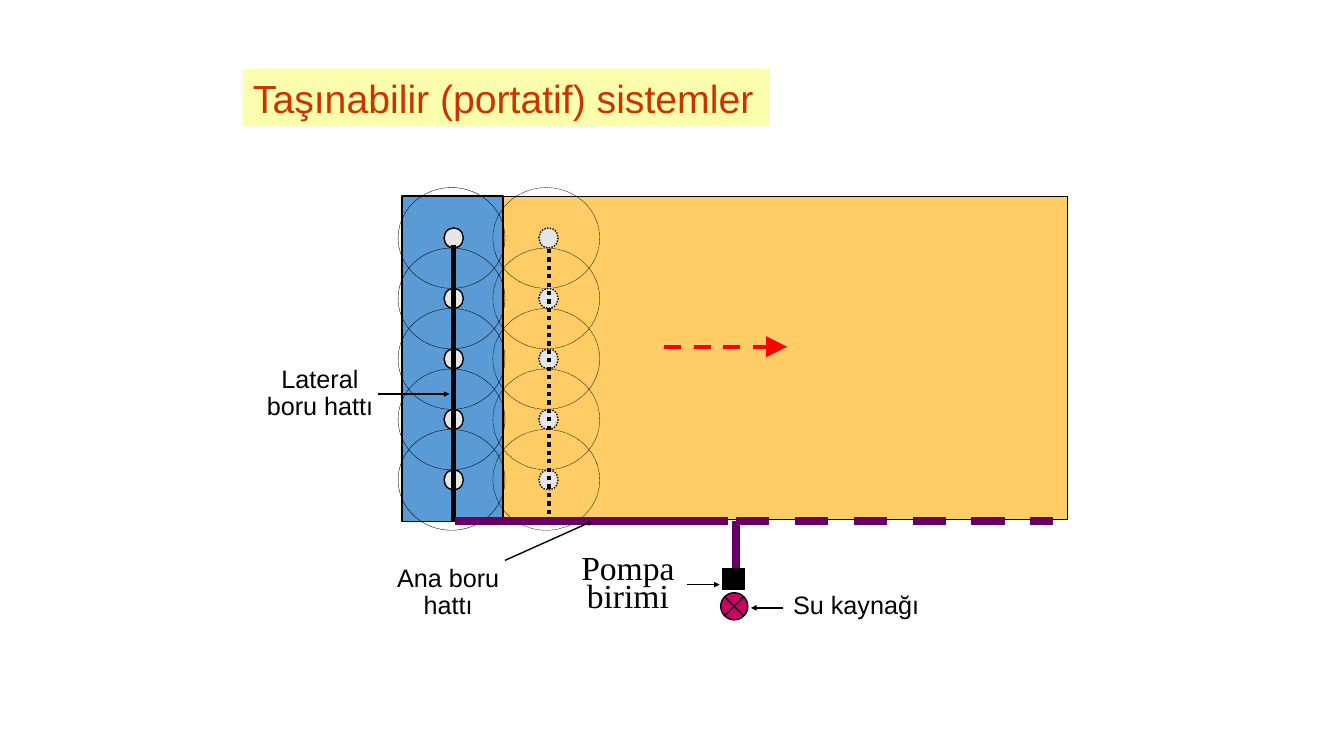
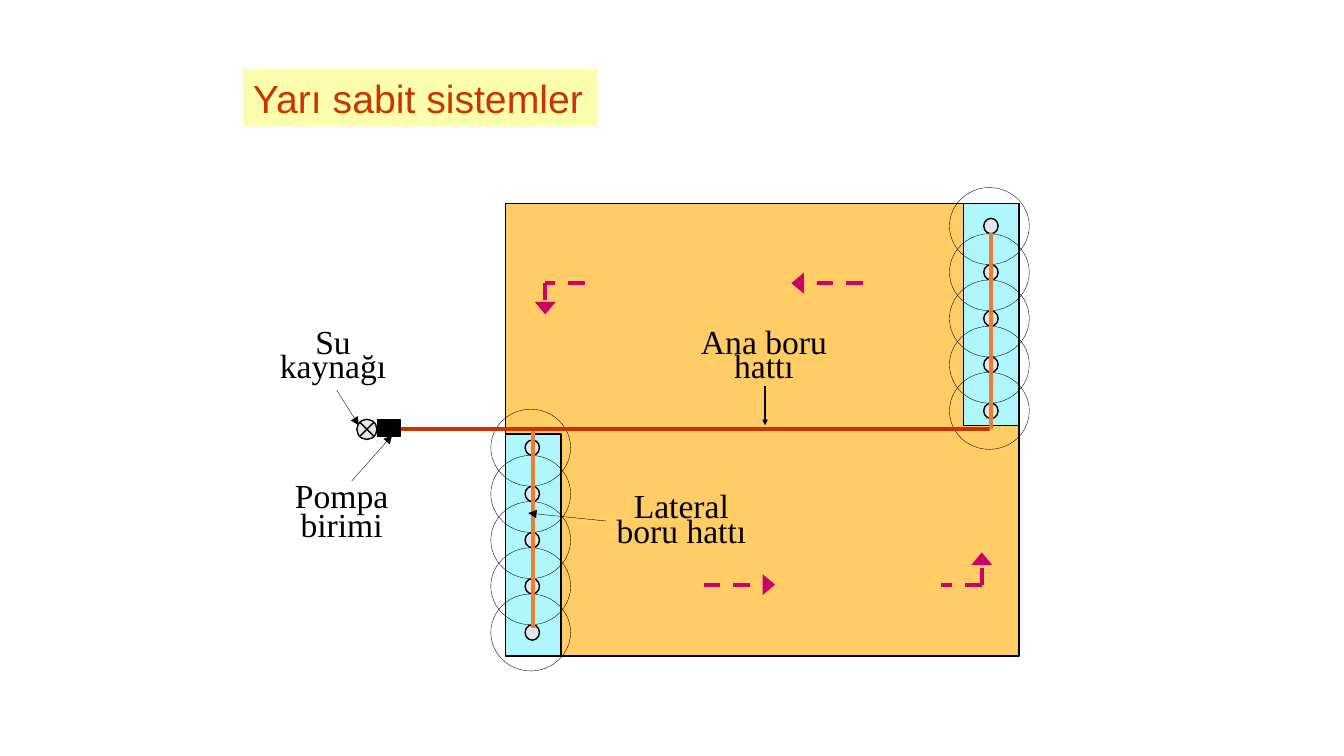
from dataclasses import dataclass
from typing import Any

from lxml import etree
from pptx import Presentation
from pptx.dml.color import RGBColor
from pptx.enum.dml import MSO_LINE
from pptx.enum.shapes import MSO_CONNECTOR, MSO_SHAPE
from pptx.enum.text import MSO_ANCHOR, MSO_AUTO_SIZE, PP_ALIGN
from pptx.oxml.ns import qn
from pptx.util import Pt

RECT = MSO_SHAPE.RECTANGLE
CIRCLE = MSO_SHAPE.FLOWCHART_CONNECTOR
CROSSED_CIRCLE = MSO_SHAPE.FLOWCHART_SUMMING_JUNCTION
STRAIGHT = MSO_CONNECTOR.STRAIGHT
DASH = MSO_LINE.DASH
DOTS = MSO_LINE.ROUND_DOT
LEFT, CENTER = PP_ALIGN.LEFT, PP_ALIGN.CENTER
MIDDLE = MSO_ANCHOR.MIDDLE
FIXED = MSO_AUTO_SIZE.NONE

SANS, SERIF = "Arial", "Times New Roman"
SPRINKLERS = 5
SMALL_HEAD = ("sm", "sm")
MEDIUM_HEAD = ("med", "med")
WIDE_HEAD = ("lg", "med")
LARGE_HEAD = ("lg", "lg")

COLORS = {
    "title": "CC3300",
    "title_band": "FBFFAD",
    "field": "FFCC66",
    "wet_blue": "5B9BD5",
    "wet_cyan": "AFF6FD",
    "sprinkler": "E7E6E6",
    "ink": "000000",
    "red": "FF0000",
    "purple": "660066",
    "pink": "CC0066",
    "main": "CC3300",
    "lateral": "ED7D31",
}


def rgb(name):
    return RGBColor.from_string(COLORS[name])


def set_font(paragraph, face, size, color):
    paragraph.font.name = face
    paragraph.font.size = Pt(size)
    paragraph.font.color.rgb = rgb(color)


def add_titled_slide(deck, text, width):
    slide = deck.slides.add_slide(deck.slide_layouts[5])
    title = slide.shapes.title
    title.left, title.top = Pt(173.5), Pt(49)
    title.width, title.height = Pt(width), Pt(41.3)
    title.fill.solid()
    title.fill.fore_color.rgb = rgb("title_band")
    frame = title.text_frame
    frame.text = text
    frame.word_wrap = False
    frame.auto_size = FIXED
    frame.vertical_anchor = MIDDLE
    frame.paragraphs[0].alignment = LEFT
    set_font(frame.paragraphs[0], SANS, 28, "title")
    return slide


@dataclass
class Diagram:
    slide: Any
    left: float
    top: float

    def place(self, x, y):
        return Pt(round(self.left + x, 2)), Pt(round(self.top + y, 2))

    def figure(self, kind, x, y, width, height, fill=None, weight=1,
               dash=None):
        shape = self.slide.shapes.add_shape(
            kind, *self.place(x, y), Pt(width), Pt(height))
        shape.shadow.inherit = False
        if fill:
            shape.fill.solid()
            shape.fill.fore_color.rgb = rgb(fill)
        else:
            shape.fill.background()
        shape.line.color.rgb = rgb("ink")
        shape.line.width = Pt(weight)
        if dash:
            shape.line.dash_style = dash

    def line(self, start, end, color="ink", weight=1, dash=None, head=None):
        connector = self.slide.shapes.add_connector(
            STRAIGHT, *self.place(*start), *self.place(*end))
        connector.line.color.rgb = rgb(color)
        connector.line.width = Pt(weight)
        if dash:
            connector.line.dash_style = dash
        properties = connector._element.spPr
        if head:
            etree.SubElement(properties.find(qn("a:ln")), qn("a:tailEnd"),
                             type="triangle", w=head[0], len=head[1])
        etree.SubElement(properties, qn("a:effectLst"))

    def label(self, lines, x, y, width, height, face, size, spacing,
              align=CENTER):
        box = self.slide.shapes.add_textbox(
            *self.place(x, y), Pt(width), Pt(height))
        frame = box.text_frame
        frame.text = "\n".join(lines)
        frame.word_wrap = False
        frame.auto_size = FIXED
        frame.vertical_anchor = MIDDLE
        for paragraph in frame.paragraphs:
            paragraph.alignment = align
            paragraph.line_spacing = spacing
            set_font(paragraph, face, size, "ink")

    def sprinkler_column(self, x, y, reach_width, reach_height, dash=None):
        for index in range(SPRINKLERS):
            row = y + index * 0.6 * reach_height
            self.figure(CIRCLE, x, row, reach_width, reach_height,
                        weight=0.25, dash=dash)
            self.figure(CIRCLE, x + 0.43 * reach_width,
                        row + 0.4 * reach_height, 0.18 * reach_width,
                        0.2 * reach_height, "sprinkler", dash=dash)


def draw_portable_system(slide, left, top):
    plan = Diagram(slide, left, top)
    main_y, riser_x = 232.2, 235.6

    plan.figure(RECT, 0, 0, 472.5, 231, "field", 0.25)
    plan.line((184.5, 107.7), (272.3, 107.7), "red", 3, DASH, LARGE_HEAD)
    plan.figure(RECT, -2.7, 0, 72, 232.6, "wet_blue")
    plan.sprinkler_column(-5.6, -6, 76.3, 72)
    plan.sprinkler_column(62.1, -6, 76.3, 72, DOTS)
    plan.line((34, 35), (34, main_y), weight=3)
    plan.line((102.4, 37.8), (102.4, 229.4), weight=3, dash=DOTS)

    plan.figure(RECT, 226.2, 266, 15.8, 15.1, "ink")
    plan.line((34.7, main_y), (229.8, main_y), "purple", 6)
    plan.line((riser_x, main_y), (462.4, main_y), "purple", 6, DASH)
    plan.line((riser_x, main_y), (riser_x, 266), "purple", 6)
    plan.figure(CROSSED_CIRCLE, 224.8, 283.4, 19.4, 19.4, "pink")

    plan.label(["Pompa", "birimi"], 117.5, 254.6, 82, 48, SERIF, 24, 0.7)
    plan.label(["Su kaynağı"], 269.4, 277.6, 109.4, 28.8, SANS, 18, 1, LEFT)
    plan.label(["Ana boru", "hattı"], -14.2, 260.3, 88.6, 46.8, SANS, 18, 0.9)
    plan.label(["Lateral", "boru hattı"], -107.1, 117.8, 91.4, 46.8,
               SANS, 18, 0.9)
    for start, end in (
        ((269.4, 294.2), (246.4, 294.2)),
        ((201, 277.6), (224, 277.6)),
        ((70.7, 260.3), (133.4, main_y)),
        ((-20, 141.5), (31.1, 141.5)),
    ):
        plan.line(start, end, head=SMALL_HEAD)


def draw_semi_fixed_system(slide, left, top):
    plan = Diagram(slide, left, top)
    main_y = 161.2

    plan.figure(RECT, 0, 0, 367, 323, "field")
    for lines, x, y, width, height, spacing in (
        (["Su", "kaynağı"], -168.8, 90, 91.4, 42.5, 0.6),
        (["Pompa", "birimi"], -158, 198, 82, 48, 0.7),
        (["Ana boru", "hattı"], 132.2, 90, 105, 42.5, 0.6),
        (["Lateral", "boru hattı"], 71.7, 207.3, 108, 42.5, 0.6),
    ):
        plan.label(lines, x, y, width, height, SERIF, 24, spacing)

    for strip_x, strip_y, reach_x, reach_y in (
        (327.3, 0, 317.2, -11.5),
        (0, 164.5, -10.4, 146.8),
    ):
        plan.figure(RECT, strip_x, strip_y, 39.7, 158.4, "wet_cyan")
        plan.sprinkler_column(reach_x, reach_y, 57, 55)

    plan.line((19.9, 162.7), (19.9, 303), "lateral", 3)
    plan.line((-91, main_y), (346, main_y), "main", 3)
    plan.line((346.8, 20.8), (346.8, main_y), "lateral", 3)
    plan.figure(CROSSED_CIRCLE, -106.1, 154, 14.4, 14.4, "sprinkler")
    plan.figure(RECT, -91, 154, 15.8, 12.2, "ink")

    plan.line((185.5, 130.3), (185.5, 158.3), head=SMALL_HEAD)
    for start, end in (
        ((-120.5, 133.1), (-104.7, 158.3)),
        ((-109.7, 198), (-80.9, 165.5)),
        ((72.4, 226.7), (16.3, 221)),
    ):
        plan.line(start, end, weight=0.25, head=MEDIUM_HEAD)

    for start, end, head in (
        ((255.3, 56.8), (204.2, 56.8), WIDE_HEAD),
        ((56.6, 56.8), (28.5, 56.8), None),
        ((28.5, 56.8), (28.5, 79.1), WIDE_HEAD),
        ((141.6, 272.1), (192.7, 272.1), WIDE_HEAD),
        ((340.3, 272.1), (311.5, 272.1), None),
        ((340.3, 272.1), (340.3, 249.1), WIDE_HEAD),
    ):
        plan.line(start, end, "pink", 3, DASH, head)


def main():
    deck = Presentation()
    deck.slide_width, deck.slide_height = Pt(960), Pt(540)
    portable = add_titled_slide(deck, "Taşınabilir (portatif) sistemler", 376.5)
    draw_portable_system(portable, 290, 140)
    semi_fixed = add_titled_slide(deck, "Yarı sabit sistemler", 253.4)
    draw_semi_fixed_system(semi_fixed, 361, 145.5)
    deck.save("out.pptx")


if __name__ == "__main__":
    main()
